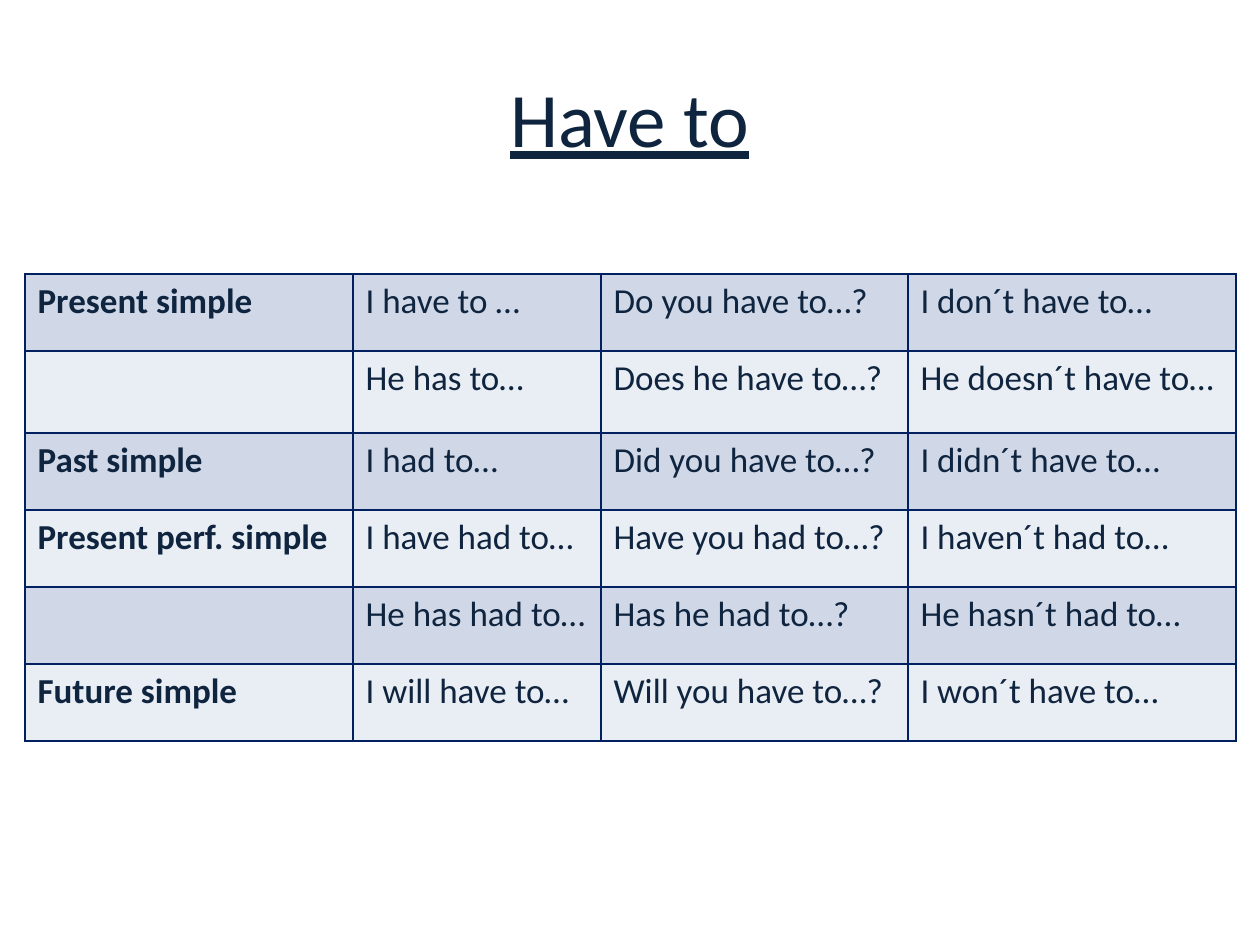
from lxml import etree
from pptx import Presentation
from pptx.dml.color import RGBColor
from pptx.enum.text import MSO_ANCHOR, PP_ALIGN
from pptx.oxml.ns import qn
from pptx.util import Pt

MIDDLE = MSO_ANCHOR.MIDDLE
CENTER = PP_ALIGN.CENTER

HEADING = "Have to"
TENSES = [
    ("Present simple", "I have to …", "Do you have to…?", "I don´t have to…"),
    ("", "He has to…", "Does he have to…?", "He doesn´t have to…"),
    ("Past simple", "I had to…", "Did you have to…?", "I didn´t have to…"),
    ("Present perf. simple", "I have had to…", "Have you had to…?", "I haven´t had to…"),
    ("", "He has had to…", "Has he had to…?", "He hasn´t had to…"),
    ("Future simple", "I will have to…", "Will you have to…?", "I won´t have to…"),
]
COLUMN_WIDTHS = [328, 248, 307, 328]
ROW_HEIGHTS = [77, 82, 77, 77, 77, 77]
BANDS = ["D0D8E8", "E9EDF4"]
INK = "0F243E"
BORDER = "002060"
HEADING_FORMAT = {"name": "Calibri", "size": Pt(44), "underline": True}
CELL_FORMAT = {"name": "Calibri", "size": Pt(20)}


def px(length):
    return round(length * 914400 / 126)


def color(value):
    return RGBColor.from_string(value)


def write(paragraph, text, formats):
    run = paragraph.add_run()
    run.text = text
    run.font.color.rgb = color(INK)
    for key, value in formats.items():
        setattr(run.font, key, value)


def add_borders(cell):
    properties = cell._tc.get_or_add_tcPr()
    for position, side in enumerate(("a:lnL", "a:lnR", "a:lnT", "a:lnB")):
        line = etree.Element(qn(side), w=str(Pt(1)))
        fill = etree.SubElement(line, qn("a:solidFill"))
        etree.SubElement(fill, qn("a:srgbClr"), val=BORDER)
        properties.insert(position, line)


deck = Presentation()
deck.slide_width, deck.slide_height = px(1260), px(945)
slide = deck.slides.add_slide(deck.slide_layouts[6])

heading = slide.shapes.add_textbox(px(63), px(38), px(1134), px(157)).text_frame
heading.word_wrap = True
heading.vertical_anchor = MIDDLE
heading.paragraphs[0].alignment = CENTER
write(heading.paragraphs[0], HEADING, HEADING_FORMAT)

tenses = slide.shapes.add_table(
    len(TENSES), len(COLUMN_WIDTHS), px(25), px(274),
    px(sum(COLUMN_WIDTHS)), px(sum(ROW_HEIGHTS)),
).table
for column, width in zip(tenses.columns, COLUMN_WIDTHS):
    column.width = px(width)
for row, height in zip(tenses.rows, ROW_HEIGHTS):
    row.height = px(height)

for r, forms in enumerate(TENSES):
    for c, form in enumerate(forms):
        cell = tenses.cell(r, c)
        cell.fill.solid()
        cell.fill.fore_color.rgb = color(BANDS[r % 2])
        add_borders(cell)
        if form:
            write(cell.text_frame.paragraphs[0], form, {**CELL_FORMAT, "bold": c == 0})

deck.save("out.pptx")
